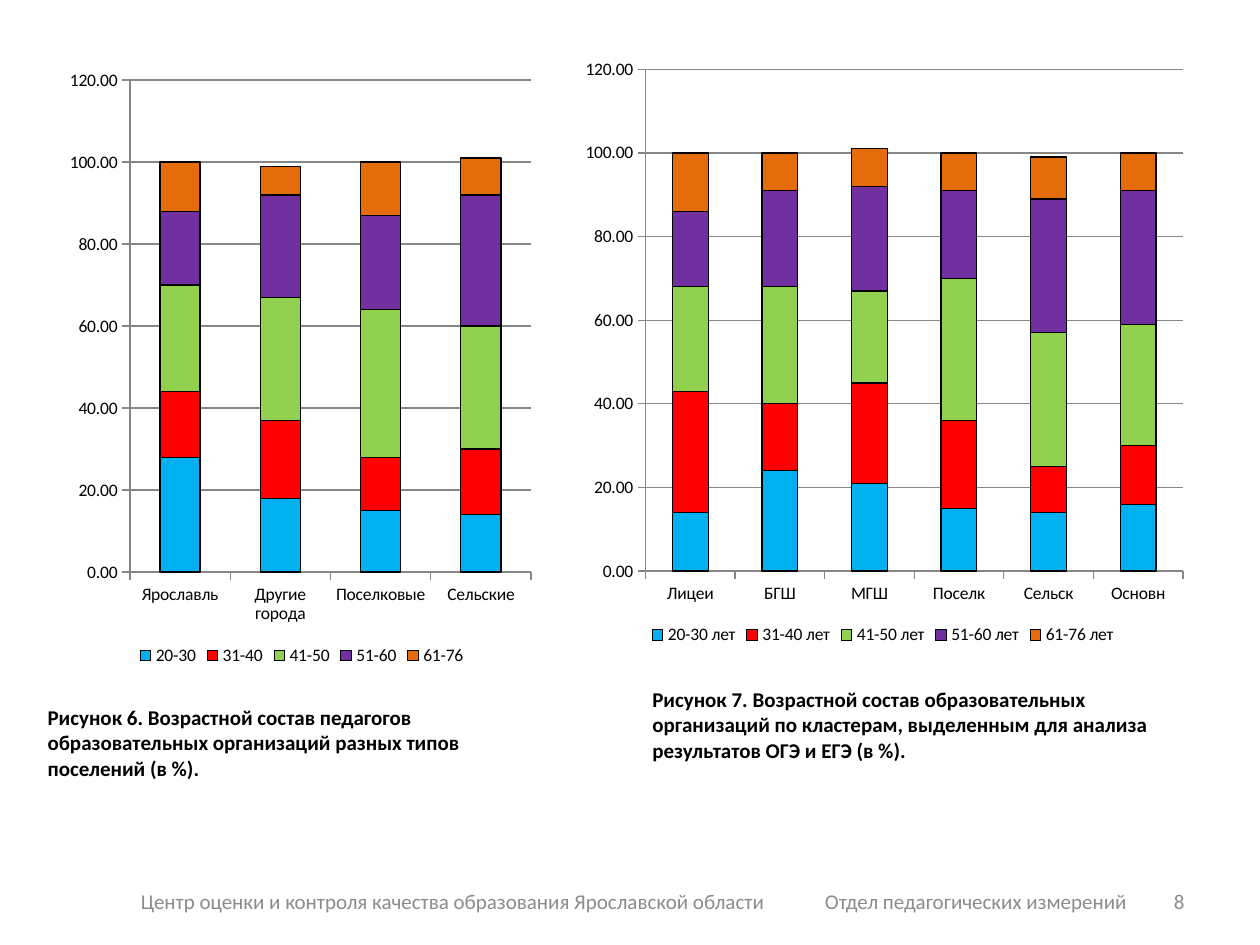
from dataclasses import dataclass

from lxml.etree import SubElement
from pptx import Presentation
from pptx.chart.chart import Chart
from pptx.chart.data import CategoryChartData
from pptx.dml.color import RGBColor
from pptx.enum.chart import XL_CHART_TYPE, XL_LEGEND_POSITION, XL_TICK_MARK
from pptx.enum.text import MSO_ANCHOR, PP_ALIGN
from pptx.oxml.ns import qn
from pptx.slide import Slide
from pptx.util import Cm, Pt

FONT = "Calibri"
COLORS = {"text": "000000", "footer": "8C8C8C", "axis": "868686", "outline": "000000"}
AGE_COLORS = {
    "20-30": "00B0F0",
    "31-40": "FF0000",
    "41-50": "92D050",
    "51-60": "7030A0",
    "61-76": "E46C0A",
}


@dataclass
class Area:
    """A rectangle: lengths in centimetres, or shares of a chart."""
    left: float
    top: float
    width: float
    height: float

    def lengths(self) -> tuple:
        return Cm(self.left), Cm(self.top), Cm(self.width), Cm(self.height)


@dataclass
class AgeChart:
    area: Area
    plot: Area
    unit: str
    shares: dict[str, tuple]  # category -> percent in each age group


CHARTS = [
    AgeChart(
        Area(1.27, 1.12, 9.63, 12.4), Area(0.14, 0.04, 0.84, 0.8), "",
        {
            "Ярославль": (28, 16, 26, 18, 12),
            "Другие города": (18, 19, 30, 25, 7),
            "Поселковые": (15, 13, 36, 23, 13),
            "Сельские": (14, 16, 30, 32, 9),
        },
    ),
    AgeChart(
        Area(11.5, 0.91, 12.6, 12.19), Area(0.12, 0.04, 0.86, 0.83), " лет",
        {
            "Лицеи": (14, 29, 25, 18, 14),
            "БГШ": (24, 16, 28, 23, 9),
            "МГШ": (21, 24, 22, 25, 9),
            "Поселк": (15, 21, 34, 21, 9),
            "Сельск": (14, 11, 32, 32, 10),
            "Основн": (16, 14, 29, 32, 9),
        },
    ),
]


def color(name: str) -> RGBColor:
    return RGBColor.from_string(COLORS[name])


def add_text(slide: Slide, text: str, area: Area, *, ink: str = "text", bold: bool = False,
             align: PP_ALIGN = PP_ALIGN.LEFT, anchor: MSO_ANCHOR = MSO_ANCHOR.MIDDLE) -> None:
    frame = slide.shapes.add_textbox(*area.lengths()).text_frame
    frame.word_wrap = True
    frame.vertical_anchor = anchor
    para = frame.paragraphs[0]
    para.alignment = align
    span = para.add_run()
    span.text = text
    span.font.name = FONT
    span.font.size = Pt(12)
    span.font.bold = bold
    span.font.color.rgb = color(ink)


def place_plot(chart: Chart, plot: Area) -> None:
    """Fix the inner plot area, as shares of the chart."""
    plot_area = chart._chartSpace.chart.plotArea
    for old in plot_area.findall(qn("c:layout")):
        plot_area.remove(old)
    layout = SubElement(plot_area, qn("c:layout"))
    plot_area.insert(0, layout)
    manual = SubElement(layout, qn("c:manualLayout"))
    settings = {"layoutTarget": "inner", "xMode": "edge", "yMode": "edge",
                "x": plot.left, "y": plot.top, "w": plot.width, "h": plot.height}
    for tag, value in settings.items():
        SubElement(manual, qn(f"c:{tag}")).set("val", str(value))


def add_age_chart(slide: Slide, item: AgeChart) -> None:
    data = CategoryChartData(number_format="0.00")
    data.categories = list(item.shares)
    for age, values in zip(AGE_COLORS, zip(*item.shares.values())):
        data.add_series(age + item.unit, values)
    chart = slide.shapes.add_chart(
        XL_CHART_TYPE.COLUMN_STACKED, *item.area.lengths(), data).chart
    chart.has_title = False
    chart.font.name = FONT
    chart.font.size = Pt(10)
    chart.font.color.rgb = color("text")
    chart.has_legend = True
    chart.legend.position = XL_LEGEND_POSITION.BOTTOM
    chart.legend.include_in_layout = False
    place_plot(chart, item.plot)

    # Stacked columns
    columns = chart.plots[0]
    columns.gap_width = 150
    columns.overlap = 100
    columns.vary_by_categories = False
    for series, fill in zip(columns.series, AGE_COLORS.values()):
        series.format.fill.solid()
        series.format.fill.fore_color.rgb = RGBColor.from_string(fill)
        series.format.line.color.rgb = color("outline")
        series.format.line.width = Pt(0.75)

    # Axes and gridlines
    scale = chart.value_axis
    scale.minimum_scale, scale.maximum_scale, scale.major_unit = 0, 120, 20
    scale.has_major_gridlines = True
    scale.tick_labels.number_format = "0.00"
    scale.tick_labels.number_format_is_linked = False
    for axis in (scale, chart.category_axis):
        axis.major_tick_mark = XL_TICK_MARK.OUTSIDE
    for part in (scale, chart.category_axis, scale.major_gridlines):
        part.format.line.color.rgb = color("axis")
        part.format.line.width = Pt(0.75)


def main() -> None:
    deck = Presentation()
    deck.slide_width, deck.slide_height = Cm(25.4), Cm(19.05)
    page = deck.slides.add_slide(deck.slide_layouts[6])

    # Charts
    for item in CHARTS:
        add_age_chart(page, item)

    # Captions
    add_text(page, "Рисунок 6. Возрастной состав педагогов образовательных организаций "
             "разных типов поселений (в %).", Area(0.71, 14.07, 10.8, 1.8), bold=True)
    add_text(page, "Рисунок 7. Возрастной состав образовательных организаций по кластерам, "
             "выделенным для анализа результатов ОГЭ и ЕГЭ (в %).",
             Area(12.9, 13.72, 11.3, 1.8), bold=True, anchor=MSO_ANCHOR.TOP)

    # Footer
    add_text(page, "Центр оценки и контроля качества образования Ярославской области",
             Area(2.59, 17.65, 13.6, 1.02), ink="footer")
    add_text(page, "Отдел педагогических измерений",
             Area(16.38, 17.65, 6.8, 1.02), ink="footer")
    add_text(page, "8", Area(23.2, 17.65, 0.93, 1.02), ink="footer", align=PP_ALIGN.RIGHT)

    deck.save("out.pptx")


if __name__ == "__main__":
    main()
